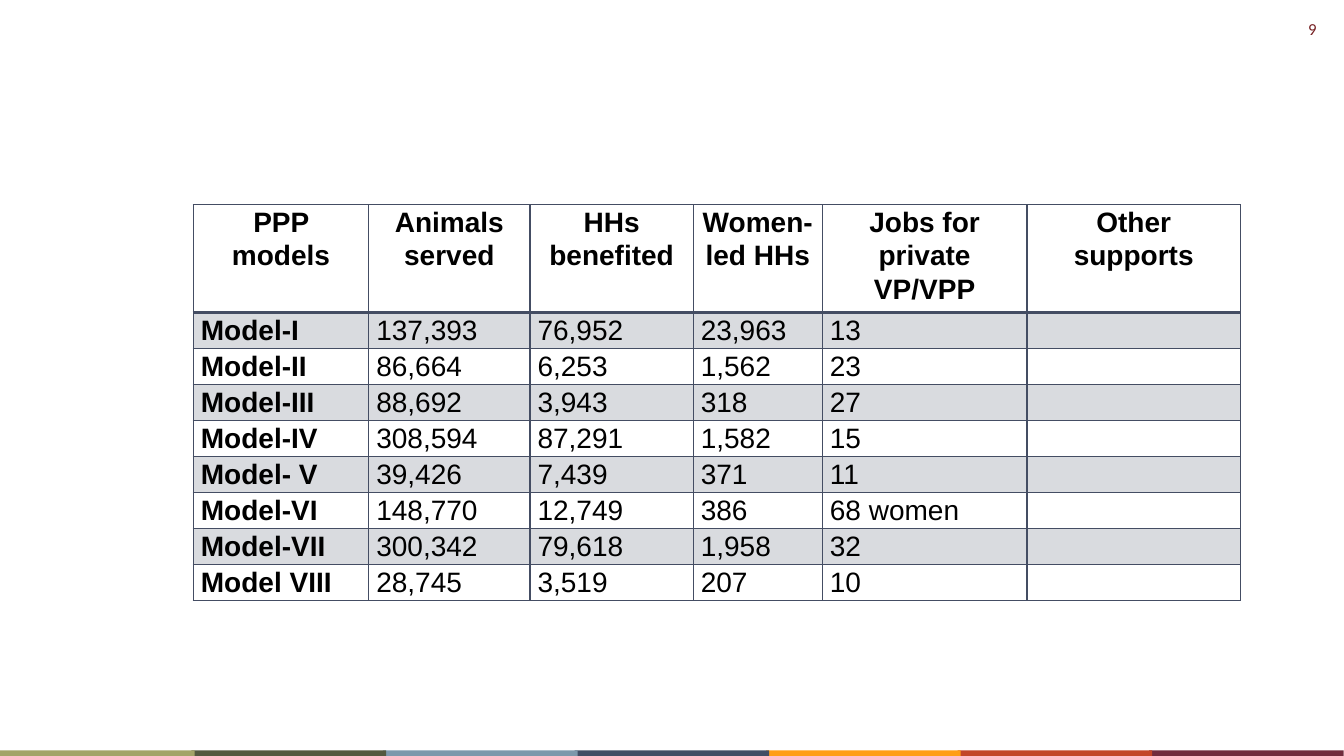
from dataclasses import dataclass

from lxml import etree
from pptx import Presentation
from pptx.dml.color import RGBColor
from pptx.enum.shapes import MSO_SHAPE
from pptx.enum.text import MSO_ANCHOR, PP_ALIGN
from pptx.oxml.ns import qn
from pptx.util import Pt

RECT = MSO_SHAPE.RECTANGLE
LEFT, CENTER, RIGHT = PP_ALIGN.LEFT, PP_ALIGN.CENTER, PP_ALIGN.RIGHT
TOP, MIDDLE = MSO_ANCHOR.TOP, MSO_ANCHOR.MIDDLE


@dataclass(frozen=True)
class Theme:
    """Colours, fonts and sizes of the slide."""
    text: str = "000000"
    number: str = "762123"
    grid: str = "444D63"
    stripes: tuple = ("A3A467", "53593E", "7C98AB", "404E65",
                      "FF9E16", "C34628", "712C3D")
    table_font: str = "Arial"
    number_font: str = "Calibri"
    table_size: int = 20
    number_size: int = 12
    band_alpha: int = 20


THEME = Theme()
COL_WIDTHS = (125.3, 115.2, 116.6, 92.2, 146.2, 152.6)
HEADER_HEIGHT, ROW_HEIGHT = 59, 25.7
ROWS = (
    ("PPP models", "Animals served", "HHs benefited", "Women-led HHs",
     "Jobs for private VP/VPP", "Other supports"),
    ("Model-I", "137,393", "76,952", "23,963", "13", ""),
    ("Model-II", "86,664", "6,253", "1,562", "23", ""),
    ("Model-III", "88,692", "3,943", "318", "27", ""),
    ("Model-IV", "308,594", "87,291", "1,582", "15", ""),
    ("Model- V", "39,426", "7,439", "371", "11", ""),
    ("Model-VI", "148,770", "12,749", "386", "68 women", ""),
    ("Model-VII", "300,342", "79,618", "1,958", "32", ""),
    ("Model VIII", "28,745", "3,519", "207", "10", ""),
)


def write(tf, text, *, size, font, color, bold=False, align=LEFT, spacing=1.0):
    """Put one formatted paragraph into a text frame."""
    p = tf.paragraphs[0]
    p.alignment = align
    p.line_spacing = spacing
    r = p.add_run()
    r.text = text
    r.font.size = Pt(size)
    r.font.name = font
    r.font.bold = bold
    r.font.color.rgb = RGBColor.from_string(color)


def add_page_number(s, text):
    """Add the page number at the top right."""
    sp = s.shapes.add_textbox(Pt(897), Pt(10), Pt(50.5), Pt(21.6))
    tf = sp.text_frame
    tf.word_wrap = True
    tf.vertical_anchor = MIDDLE
    write(tf, text, size=THEME.number_size, font=THEME.number_font,
          color=THEME.number, align=RIGHT)


def add_stripes(s):
    """Add the row of coloured stripes along the bottom edge."""
    width, pitch = 139, 136.8
    for i, color in reversed(list(enumerate(THEME.stripes))):
        sp = s.shapes.add_shape(RECT, Pt(i * pitch), Pt(536), Pt(width), Pt(4.3))
        sp.shadow.inherit = False
        sp.fill.solid()
        sp.fill.fore_color.rgb = RGBColor.from_string(color)
        sp.line.fill.background()


def set_borders(cell, **widths):
    """Draw the borders of a cell, with widths given by side."""
    tcPr = cell._tc.get_or_add_tcPr()
    for side in "LRTB":
        ln = etree.SubElement(tcPr, qn(f"a:ln{side}"), w=str(Pt(widths.get(side, 1))))
        fill = etree.SubElement(ln, qn("a:solidFill"))
        etree.SubElement(fill, qn("a:srgbClr"), val=THEME.grid)


def fill_band(cell):
    """Tint a cell with the transparent grid colour."""
    cell.fill.solid()
    cell.fill.fore_color.rgb = RGBColor.from_string(THEME.grid)
    clr = cell._tc.tcPr.find(f"{qn('a:solidFill')}/{qn('a:srgbClr')}")
    etree.SubElement(clr, qn("a:alpha"), val=str(THEME.band_alpha * 1000))


def format_cell(cell, text, row, col):
    """Set the text, borders and fill of one table cell."""
    header = row == 0
    cell.margin_left = cell.margin_right = Pt(5.4)
    cell.margin_top = cell.margin_bottom = Pt(0)
    cell.vertical_anchor = TOP
    if text:
        write(cell.text_frame, text, size=THEME.table_size,
              font=THEME.table_font, color=THEME.text,
              bold=header or col == 0, align=CENTER if header else LEFT,
              spacing=1.07)
    set_borders(cell, T=2 if row == 1 else 1, B=2 if header else 1)
    if row % 2:
        fill_band(cell)
    else:
        cell.fill.background()


def add_model_table(s):
    """Add the table of PPP models."""
    height = HEADER_HEIGHT + ROW_HEIGHT * (len(ROWS) - 1)
    table = s.shapes.add_table(len(ROWS), len(COL_WIDTHS), Pt(138.1), Pt(146.3),
                               Pt(sum(COL_WIDTHS)), Pt(height)).table
    for column, width in zip(table.columns, COL_WIDTHS):
        column.width = Pt(width)
    for i, values in enumerate(ROWS):
        table.rows[i].height = Pt(ROW_HEIGHT if i else HEADER_HEIGHT)
        for j, text in enumerate(values):
            format_cell(table.cell(i, j), text, i, j)


def main():
    """Build the slide and save it."""
    prs = Presentation()
    prs.slide_width, prs.slide_height = Pt(960), Pt(540)
    s = prs.slides.add_slide(prs.slide_layouts[6])
    add_page_number(s, "9")
    add_stripes(s)
    add_model_table(s)
    prs.save("out.pptx")


if __name__ == "__main__":
    main()
